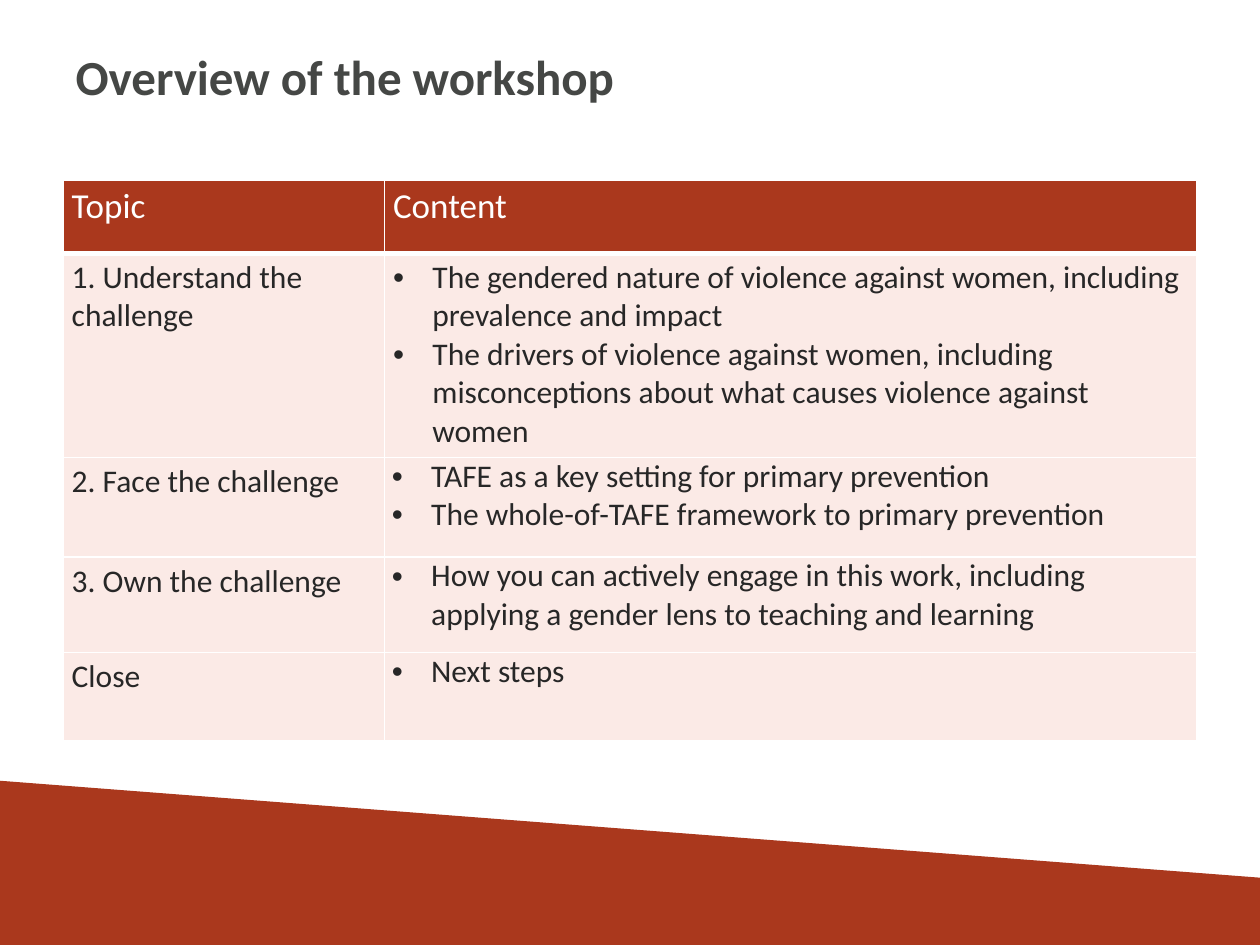
from lxml.etree import SubElement
from pptx import Presentation
from pptx.dml.color import RGBColor
from pptx.enum.shapes import MSO_SHAPE
from pptx.enum.text import MSO_ANCHOR, PP_ALIGN
from pptx.oxml.ns import qn
from pptx.util import Pt

RUST = RGBColor(0xAA, 0x38, 0x1D)
BLUSH = RGBColor(0xFB, 0xEA, 0xE6)
WHITE = RGBColor(0xFF, 0xFF, 0xFF)
INK = RGBColor(0x27, 0x27, 0x27)
CHARCOAL = RGBColor(0x45, 0x47, 0x45)
FONT = "Calibri"

COLUMN_WIDTHS = [183.6, 464.4]
ROW_HEIGHTS = [41.8, 116.6, 56.9, 54.7, 50.4]
TOPICS = [
    ("Topic", ["Content"]),
    ("1. Understand the challenge", [
        "The gendered nature of violence against women, including prevalence and impact",
        "The drivers of violence against women, including misconceptions about "
        "what causes violence against women"]),
    ("2. Face the challenge", [
        "TAFE as a key setting for primary prevention",
        "The whole-of-TAFE framework to primary prevention"]),
    ("3. Own the challenge", [
        "How you can actively engage in this work, including applying "
        "a gender lens to teaching and learning"]),
    ("Close", ["Next steps"]),
]


def add_span(para, text, size, color, bold=False):
    span = para.add_run()
    span.text = text
    span.font.name = FONT
    span.font.size = Pt(size)
    span.font.bold = bold
    span.font.color.rgb = color


def add_borders(cell, bottom_width):
    """Draw white cell borders, 1 pt wide except at the bottom."""
    properties = cell._tc.get_or_add_tcPr()
    for side, width in (("L", 1), ("R", 1), ("T", 1), ("B", bottom_width)):
        line = SubElement(properties, qn(f"a:ln{side}"), w=str(Pt(width)))
        fill = SubElement(line, qn("a:solidFill"))
        SubElement(fill, qn("a:srgbClr"), val=str(WHITE))


deck = Presentation()
deck.slide_width, deck.slide_height = Pt(720), Pt(540)
page = deck.slides.add_slide(deck.slide_layouts[5])

# Slanted band along the bottom edge
band = page.shapes.add_shape(MSO_SHAPE.RECTANGLE, Pt(-19.4), Pt(473.8), Pt(753.8), Pt(95.8))
band.rotation = 4.4
band.shadow.inherit = False
band.fill.solid()
band.fill.fore_color.rgb = RUST
band.line.fill.background()

title = page.shapes.title
title.left, title.top, title.width, title.height = Pt(36), Pt(21.6), Pt(648), Pt(52.6)
title.text_frame.vertical_anchor = MSO_ANCHOR.TOP
title.text_frame.margin_top = Pt(5)
para = title.text_frame.paragraphs[0]
para.alignment = PP_ALIGN.LEFT
add_span(para, "Overview of the workshop", 28, CHARCOAL, bold=True)

# Workshop table
table = page.shapes.add_table(
    len(ROW_HEIGHTS), len(COLUMN_WIDTHS), Pt(36), Pt(103),
    Pt(sum(COLUMN_WIDTHS)), Pt(sum(ROW_HEIGHTS))).table
for column, width in zip(table.columns, COLUMN_WIDTHS):
    column.width = Pt(width)
for row, height in zip(table.rows, ROW_HEIGHTS):
    row.height = Pt(height)

for r, (topic, contents) in enumerate(TOPICS):
    header = r == 0
    for c, lines in enumerate([[topic], contents]):
        cell = table.cell(r, c)
        tight = c == 1 and r > 1
        cell.margin_left = cell.margin_right = Pt(4.3 if tight else 5)
        cell.margin_top = cell.margin_bottom = Pt(0 if tight else 2.9)
        cell.vertical_anchor = MSO_ANCHOR.TOP
        add_borders(cell, 3 if header else 1)
        cell.fill.solid()
        cell.fill.fore_color.rgb = RUST if header else BLUSH

        for i, text in enumerate(lines):
            frame = cell.text_frame
            para = frame.add_paragraph() if i else frame.paragraphs[0]
            if c == 1 and not header:
                properties = para._p.get_or_add_pPr()
                properties.set("marL", str(Pt(22.5)))
                properties.set("indent", str(Pt(-22.5)))
                SubElement(properties, qn("a:buFont"), typeface="Arial")
                SubElement(properties, qn("a:buChar"), char="•")
            add_span(para, text, 20 if header else 18, WHITE if header else INK)

deck.save("out.pptx")
